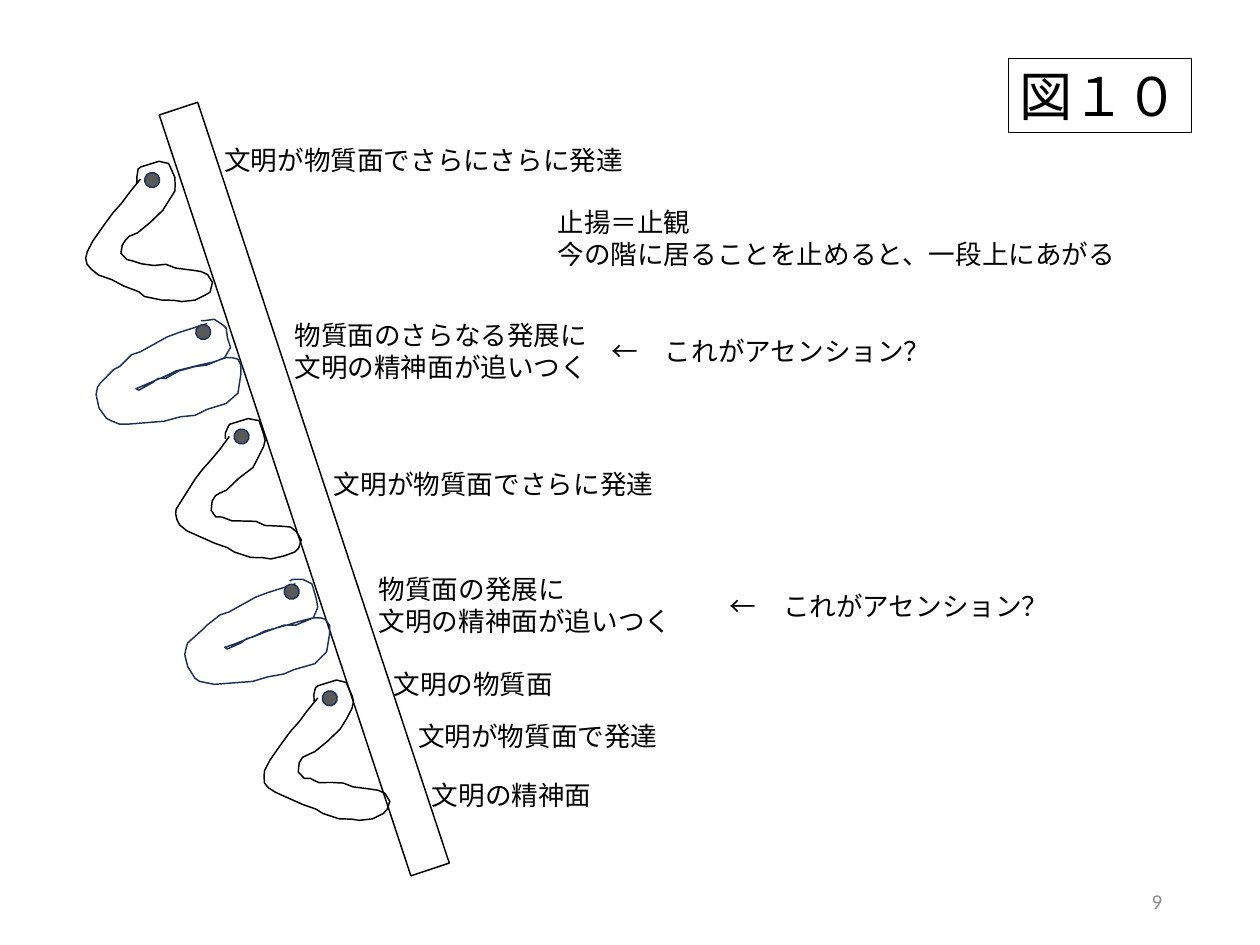
import math

from pptx import Presentation
from pptx import util as u
from pptx.dml.color import RGBColor
from pptx.enum import shapes, text

INK = {"black": "000000", "white": "FFFFFF", "navy": "1E3256",
       "dot": "595959", "page": "8C8C8C"}
UNIT = 0.72  # points per step of the outlines below
TILT = 347.2

BEND = [
    (53, 11), (43, 23), (35, 33), (27, 42), (20, 52), (8, 69), (3, 79),
    (2, 84), (3, 90), (6, 95), (13, 100), (26, 105), (38, 111), (51, 116),
    (57, 120), (73, 124), (84, 125), (92, 126), (104, 124), (114, 119),
    (118, 116), (120, 108), (116, 100), (110, 97), (102, 96), (86, 94),
    (77, 91), (66, 91), (54, 90), (46, 87), (40, 86), (35, 80), (36, 72),
    (39, 67), (43, 64), (50, 61), (62, 51), (74, 40), (80, 30), (85, 21),
    (86, 15), (85, 9), (80, -4), (70, -6), (53, -1), (51, 1), (49, 8),
    (49, 14),
]
FOLD = [
    (105, 4), (78, 13), (67, 17), (42, 31), (34, 34), (22, 44), (17, 47),
    (4, 60), (2, 64), (0, 71), (3, 83), (10, 93), (15, 96), (22, 98),
    (29, 99), (64, 96), (79, 92), (93, 90), (104, 85), (123, 79), (134, 69),
    (136, 52), (136, 43), (133, 38), (128, 36), (122, 36), (110, 40),
    (97, 43), (75, 49), (67, 53), (47, 61), (38, 65), (41, 66), (53, 60),
    (59, 56), (65, 55), (78, 49), (93, 44), (105, 43), (121, 36), (126, 27),
    (124, 18), (122, 9), (120, 5), (111, 0), (102, 1), (99, 2),
]


def turn(pts, deg, mid):
    """Turn the points about mid, clockwise on the slide."""
    c, s = math.cos(math.radians(deg)), math.sin(math.radians(deg))
    mx, my = mid
    return [(mx + (x - mx) * c - (y - my) * s,
             my + (x - mx) * s + (y - my) * c) for x, y in pts]


class Sheet:
    font = "Calibri"
    size = 18

    def __init__(self, slide):
        self.slide = slide

    def ink(self, name):
        return RGBColor.from_string(INK[name])

    def paint(self, shape, fill, line, width=1):
        shape.shadow.inherit = False
        if fill:
            shape.fill.solid()
            shape.fill.fore_color.rgb = self.ink(fill)
        else:
            shape.fill.background()
        shape.line.color.rgb = self.ink(line)
        shape.line.width = u.Pt(width)

    def shape(self, kind, box, fill, line, rot=0):
        item = self.slide.shapes.add_shape(kind, *map(u.Pt, box))
        item.rotation = rot
        self.paint(item, fill, line)

    def label(self, x, y, w, *lines, size=None, h=None, color="black"):
        size = size or self.size
        h = h or 7.2 + 1.2 * size * len(lines)
        box = self.slide.shapes.add_textbox(*map(u.Pt, (x, y, w, h)))
        frame = box.text_frame
        frame.text = "\n".join(lines)
        frame.word_wrap = False
        frame.auto_size = text.MSO_AUTO_SIZE.SHAPE_TO_FIT_TEXT
        for para in frame.paragraphs:
            para.font.name = self.font
            para.font.size = u.Pt(size)
            para.font.color.rgb = self.ink(color)
        return box

    def page(self, x, y, w, h, num):
        frame = self.label(x, y, w, num, size=14.2, h=h, color="page").text_frame
        frame.word_wrap = True
        frame.auto_size = text.MSO_AUTO_SIZE.NONE
        frame.vertical_anchor = text.MSO_ANCHOR.MIDDLE
        frame.paragraphs[0].alignment = text.PP_ALIGN.RIGHT

    def curve(self, x, y, pts, line, rot=0, mid=(0, 0)):
        pts = [(x + px * UNIT, y + py * UNIT)
               for px, py in turn(pts, -rot, mid)]
        pen = self.slide.shapes.build_freeform(*pts[0], scale=u.Pt(1))
        pen.add_line_segments(pts[1:], close=False)
        item = pen.convert_to_shape()
        item.rotation = rot
        self.paint(item, None, line)

    def dot(self, x, y):
        self.shape(shapes.MSO_SHAPE.FLOWCHART_CONNECTOR, (x, y, 10.1, 10.1),
                   "dot", "navy", TILT)

    def bend(self, x, y):
        self.curve(x, y, BEND, "black", TILT, (54.5, 66.5))
        self.dot(x + 41, y + 3)

    def fold(self, x, y):
        self.curve(x, y, FOLD, "navy")
        self.dot(x + 67.7, y + 3.6)


def main():
    deck = Presentation()
    deck.slide_width, deck.slide_height = u.Pt(852.48), u.Pt(639.36)
    sheet = Sheet(deck.slides.add_slide(deck.slide_layouts[6]))

    sheet.shape(shapes.MSO_SHAPE.RECTANGLE, (192.2, 59.8, 27.4, 542.2),
                "white", "black", 341.7)
    for x, y in [(177.1, 464.4), (117.4, 287.3), (56.9, 113.8)]:
        sheet.bend(x, y)
    for x, y in [(124.6, 391.7), (64.8, 216)]:
        sheet.fold(x, y)

    catch = "文明の精神面が追いつく"
    rise = "←　これがアセンション？"
    for item in [
        (144.7, 93.6, 287.3, "文明が物質面でさらにさらに発達"),
        (370.1, 136.1, 396, "止揚＝止観",
         "今の階に居ることを止めると、一段上にあがる"),
        (192.2, 212.4, 214.6, "物質面のさらなる発展に", catch),
        (406.8, 223.2, 231.1, rise),
        (218.9, 313.2, 232.6, "文明が物質面でさらに発達"),
        (249.1, 383.8, 214.6, "物質面の発展に", catch),
        (486.7, 395.3, 231.1, rise),
        (259.2, 448.6, 123.8, "文明の物質面"),
        (275.8, 483.8, 177.8, "文明が物質面で発達"),
        (285.1, 523.4, 123.8, "文明の精神面"),
    ]:
        sheet.label(*item)

    title = sheet.label(682.6, 39.6, 123.8, "図１０", size=36)
    sheet.paint(title, None, "black", 0.75)
    sheet.page(601.9, 592.6, 191.5, 33.8, "9")
    deck.save("out.pptx")


if __name__ == "__main__":
    main()
